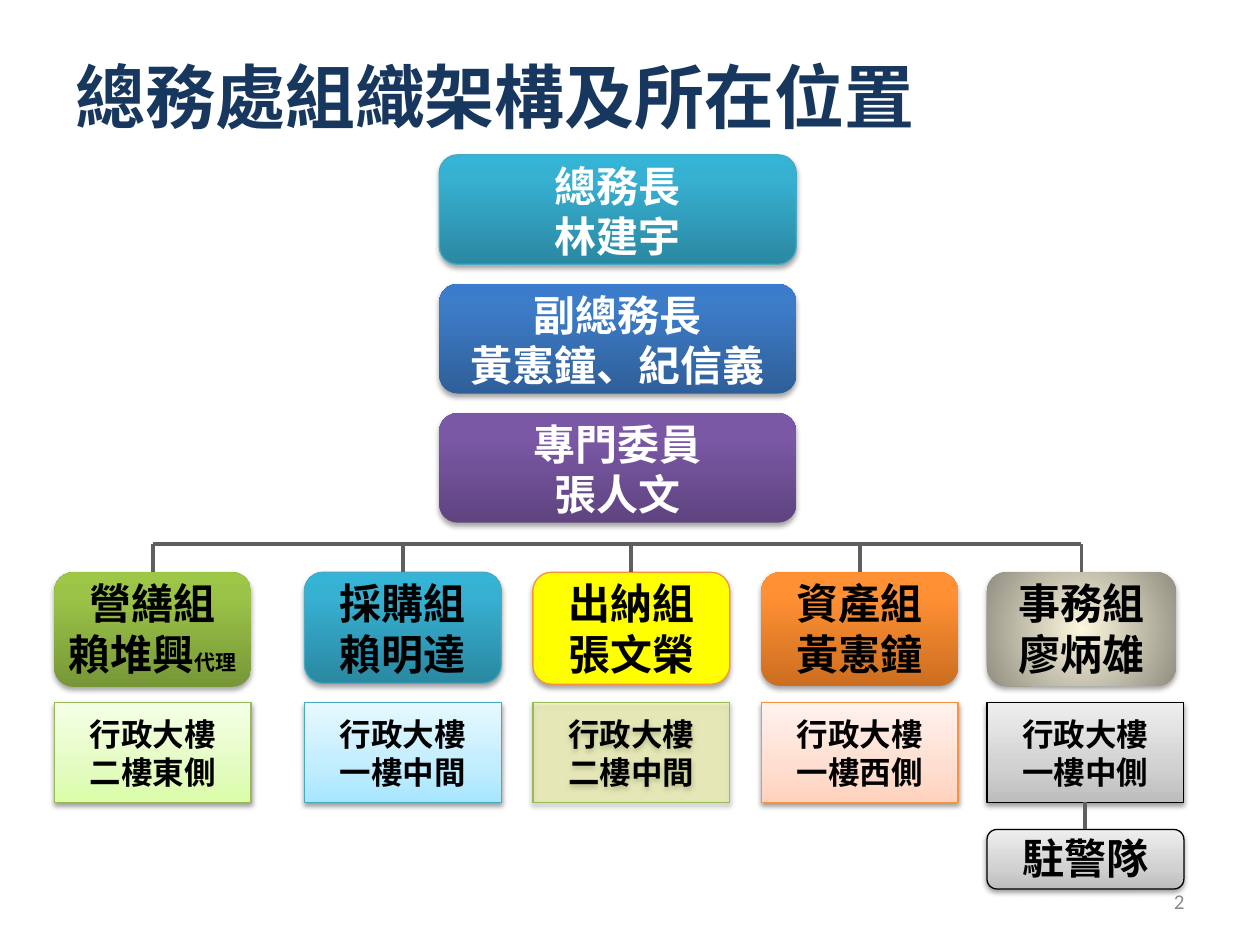
from typing import NamedTuple

from lxml import etree
from pptx import Presentation
from pptx.dml.color import RGBColor
from pptx.enum.shapes import MSO_CONNECTOR, MSO_SHAPE
from pptx.enum.text import MSO_ANCHOR, PP_ALIGN
from pptx.oxml.ns import qn
from pptx.util import Pt

STRAIGHT = MSO_CONNECTOR.STRAIGHT
ROUNDED = MSO_SHAPE.FLOWCHART_ALTERNATE_PROCESS
RECTANGLE = MSO_SHAPE.RECTANGLE
TOP, MIDDLE = MSO_ANCHOR.TOP, MSO_ANCHOR.MIDDLE
LEFT, CENTER, RIGHT = PP_ALIGN.LEFT, PP_ALIGN.CENTER, PP_ALIGN.RIGHT
TOP_SITE, BOTTOM_SITE = 0, 2


class Paint(NamedTuple):
    """Fill colours with their stops, and an optional outline."""

    colors: tuple
    stops: tuple = ()
    outline: str = ""
    radial: bool = False
    alpha: int = 100


def strong(*colors, outline=""):
    """Return a saturated vertical gradient."""
    return Paint(colors, (0, 80, 100), outline)


def pale(*colors, outline=""):
    """Return a light vertical gradient."""
    return Paint(colors, (0, 35, 100), outline)


class Theme:
    """Colours, fonts and type sizes."""

    cjk, latin, digits = "Noto Sans CJK SC", "Arial", "Calibri"
    title_size, name_size, office_size, small_size = 40, 24, 18, 12
    navy, white, black, gray, rail = "17375E", "FFFFFF", "000000", "8C8C8C", "5F5F5F"
    teal = strong("2A88A2", "37B1D2", "34B4D6", outline="46AAC5")
    blue = strong("2F5F99", "3D7CC7", "3A7CCB")
    purple = strong("5F4480", "7B58A6", "7C57A8")
    green = strong("779737", "9BC348", "9DC746")
    orange = strong("CC6E20", "FF9034", "FF9136")
    yellow = Paint(("FFFF00",), outline="F69240")
    stone = Paint(("FCF7DD", "918E81"), (0, 100), radial=True)
    pale_green = pale("DAFDA7", "E4FCC2", "F5FFE7", outline="98B955")
    pale_teal = pale("A7E6FF", "C1EDFF", "E7F8FF", outline="46AAC5")
    pale_yellow = Paint(("F4FB71",), outline="98B955", alpha=35)
    pale_orange = pale("FFD2BD", "FFDED0", "FFF2ED", outline="F69240")
    pale_gray = pale("BDBDBD", "D1D1D1", "EEEEEE", outline="000000")


def add_color(parent, color, alpha=100):
    """Append an RGB colour element."""
    rgb = etree.SubElement(parent, qn("a:srgbClr"), val=color)
    if alpha < 100:
        etree.SubElement(rgb, qn("a:alpha"), val=str(alpha * 1000))


class ChartSlide:
    """Draws the parts of an organisation chart on one slide."""

    def __init__(self, slide, theme):
        self.shapes = slide.shapes
        self.theme = theme

    def set_lines(self, frame, lines, font, size, color, align, bold=True):
        """Set one paragraph per line; a tuple holds a name and a small suffix."""
        frame.word_wrap = True
        for index, line in enumerate(lines):
            paragraph = frame.add_paragraph() if index else frame.paragraphs[0]
            paragraph.alignment = align
            paragraph.font.name = font
            paragraph.font.size = Pt(size)
            paragraph.font.bold = bold
            paragraph.font.color.rgb = RGBColor.from_string(color)
            name, suffix = line if isinstance(line, tuple) else (line, "")
            paragraph.add_run().text = name
            if suffix:
                note = paragraph.add_run()
                note.text = suffix
                note.font.size = Pt(self.theme.small_size)

    def label(self, box, text, font, size, color, align, bold):
        """Add a one-line text box."""
        frame = self.shapes.add_textbox(*map(Pt, box)).text_frame
        frame.vertical_anchor = MIDDLE
        self.set_lines(frame, [text], font, size, color, align, bold)

    def paint(self, shape, paint):
        """Apply fill and outline."""
        if paint.stops:
            fill = etree.Element(qn("a:gradFill"), rotWithShape="1")
            stop_list = etree.SubElement(fill, qn("a:gsLst"))
            for position, color in zip(paint.stops, paint.colors):
                stop = etree.SubElement(stop_list, qn("a:gs"), pos=str(position * 1000))
                add_color(stop, color)
            if paint.radial:
                center = etree.SubElement(fill, qn("a:path"), {"path": "circle"})
                sides = dict.fromkeys("ltrb", "50000")
                etree.SubElement(center, qn("a:fillToRect"), sides)
            else:
                etree.SubElement(fill, qn("a:lin"), ang="16200000", scaled="0")
        else:
            fill = etree.Element(qn("a:solidFill"))
            add_color(fill, paint.colors[0], paint.alpha)
        shape.element.spPr.find(qn("a:prstGeom")).addnext(fill)
        if paint.outline:
            shape.line.color.rgb = RGBColor.from_string(paint.outline)
            shape.line.width = Pt(0.75)
        else:
            shape.line.fill.background()

    def shade(self, shape, alpha, distance):
        """Give the shape a soft shadow straight below."""
        shape.shadow.inherit = False
        effects = shape.element.spPr.find(qn("a:effectLst"))
        shadow = etree.SubElement(
            effects, qn("a:outerShdw"), blurRad=str(Pt(3.1)), dist=str(Pt(distance)),
            dir="5400000", rotWithShape="0")
        add_color(shadow, self.theme.black, alpha)

    def card(self, box, lines, paint, font, color, shadow=(35, 1.8)):
        """Add a rounded box with a title and a name."""
        card = self.shapes.add_shape(ROUNDED, *map(Pt, box))
        self.paint(card, paint)
        self.shade(card, *shadow)
        frame = card.text_frame
        frame.vertical_anchor = TOP
        frame.margin_left = frame.margin_right = frame.margin_top = frame.margin_bottom = 0
        self.set_lines(frame, lines, font, self.theme.name_size, color, CENTER)
        return card

    def office(self, box, lines, paint):
        """Add a rectangle with a location."""
        office = self.shapes.add_shape(RECTANGLE, *map(Pt, box))
        self.paint(office, paint)
        self.shade(office, 38, 1.6)
        office.text_frame.vertical_anchor = MIDDLE
        self.set_lines(office.text_frame, lines, self.theme.cjk, self.theme.office_size,
                       self.theme.black, CENTER)
        return office

    def line(self, start, end, above=None, below=None):
        """Add a connector, joined to the boxes above and below if given."""
        line = self.shapes.add_connector(STRAIGHT, *map(Pt, start + end))
        line.line.color.rgb = RGBColor.from_string(self.theme.rail)
        line.line.width = Pt(2.25)
        etree.SubElement(line.element.spPr, qn("a:effectLst"))
        if above:
            line.begin_connect(above, BOTTOM_SITE)
        if below:
            line.end_connect(below, TOP_SITE)


def main():
    """Build the organisation chart."""
    theme = Theme()
    deck = Presentation()
    deck.slide_width, deck.slide_height = Pt(720), Pt(540)
    chart = ChartSlide(deck.slides.add_slide(deck.slide_layouts[6]), theme)

    chart.label((36, 15, 648, 79), "總務處組織架構及所在位置", theme.cjk,
                theme.title_size, theme.navy, LEFT, True)
    chart.label((516, 500.5, 168, 29), "2", theme.digits, theme.small_size,
                theme.gray, RIGHT, False)

    leaders = [
        (("總務長", "林建宇"), theme.teal),
        (("副總務長", "黃憲鐘、紀信義"), theme.blue),
        (("專門委員", "張人文"), theme.purple),
    ]
    for row, (lines, paint) in enumerate(leaders):
        chart.card((251, 88.5 + 73.8 * row, 204, 62.6), lines, paint, theme.latin, theme.white)

    units = [
        (31, 112.5, 65.5, ("營繕組", ("賴堆興", "代理")), theme.green, "二樓東側", theme.pale_green),
        (174, 112.5, 63.5, ("採購組", "賴明達"), theme.teal, "一樓中間", theme.pale_teal),
        (304.5, 112.5, 64, ("出納組", "張文榮"), theme.yellow, "二樓中間", theme.pale_yellow),
        (435, 112.5, 65, ("資產組", "黃憲鐘"), theme.orange, "一樓西側", theme.pale_orange),
        (564, 108, 65, ("事務組", "廖炳雄"), theme.stone, "一樓中側", theme.pale_gray),
    ]
    rail_y, unit_y, office_y, guard_y, office_width = 311, 327, 401.5, 474, 112.5
    centers = [left + width / 2 for left, width, *_ in units]
    chart.line((centers[0], rail_y), (centers[-1], rail_y))
    for center, (left, width, height, lines, paint, floor, office_paint) in zip(centers, units):
        unit = chart.card((left, unit_y, width, height), lines, paint, theme.cjk, theme.black)
        chart.line((center, rail_y), (center, unit_y), below=unit)
        office = chart.office((left, office_y, office_width, 57), ("行政大樓", floor), office_paint)

    guards = chart.card((left, guard_y, office_width, 34), ["駐警隊"], theme.pale_gray,
                        theme.cjk, theme.black, shadow=(38, 1.6))
    chart.line((left, office_y), (left, guard_y), above=office, below=guards)
    deck.save("out.pptx")


if __name__ == "__main__":
    main()
